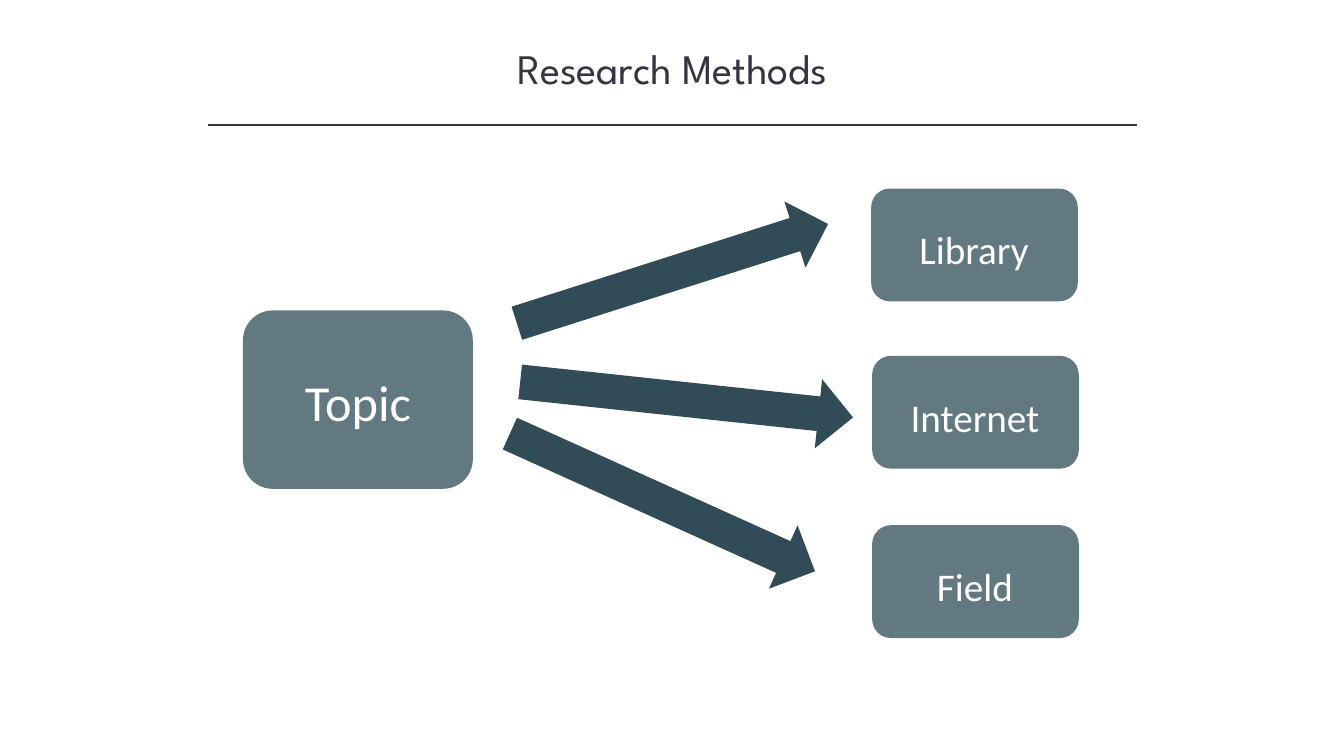
from dataclasses import dataclass

from lxml import etree
from pptx import Presentation
from pptx.dml.color import RGBColor
from pptx.enum.shapes import MSO_CONNECTOR, MSO_SHAPE
from pptx.enum.text import MSO_ANCHOR, PP_ALIGN
from pptx.oxml.ns import qn
from pptx.util import Emu, Pt

STRAIGHT = MSO_CONNECTOR.STRAIGHT
ROUNDED = MSO_SHAPE.ROUNDED_RECTANGLE
RIGHT_ARROW = MSO_SHAPE.RIGHT_ARROW
TOP, MIDDLE = MSO_ANCHOR.TOP, MSO_ANCHOR.MIDDLE
CENTER = PP_ALIGN.CENTER

EMU_PER_PX = 9144  # 100 px to the inch


@dataclass(frozen=True)
class Theme:
    ink: str = "323542"
    card: str = "627981"
    arrow: str = "314C57"
    label: str = "FFFFFF"
    title_font: str = "League Spartan"
    label_font: str = "Calibri"
    title_size: int = 30
    topic_size: int = 36
    method_size: int = 28


THEME = Theme()


def px(*lengths):
    return [Emu(length * EMU_PER_PX) for length in lengths]


def rgb(colour):
    return RGBColor.from_string(colour)


def add_text(shapes, text, box, *, font, size, colour, anchor=TOP, spacing=1.0):
    frame = shapes.add_textbox(*px(*box)).text_frame
    frame.word_wrap = True
    frame.vertical_anchor = anchor
    paragraph = frame.paragraphs[0]
    paragraph.alignment = CENTER
    paragraph.line_spacing = spacing
    run = paragraph.add_run()
    run.text = text
    run.font.name = font
    run.font.size = Pt(size)
    run.font.color.rgb = rgb(colour)


def add_solid(shapes, preset, box, colour, rotation=0):
    solid = shapes.add_shape(preset, *px(*box))
    solid.shadow.inherit = False
    solid.fill.solid()
    solid.fill.fore_color.rgb = rgb(colour)
    solid.line.fill.background()
    solid.rotation = rotation


def add_rule(shapes, left, right, y):
    rule = shapes.add_connector(STRAIGHT, *px(left, y, right, y))
    rule.line.color.rgb = rgb(THEME.ink)
    rule.line.width = Pt(1)
    etree.SubElement(rule._element.spPr, qn("a:effectLst"))


def add_card(shapes, text, card_box, label_box, size):
    """Group a rounded card with its label."""
    group = shapes.add_group_shape().shapes
    add_solid(group, ROUNDED, card_box, THEME.card)
    add_text(group, text, label_box, font=THEME.label_font, size=size,
             colour=THEME.label, anchor=MIDDLE, spacing=1.5)


def main():
    deck = Presentation()
    deck.slide_width, deck.slide_height = px(1333, 750)
    shapes = deck.slides.add_slide(deck.slide_layouts[6]).shapes

    add_text(shapes, "Research Methods", (167, 37, 1000, 61),
             font=THEME.title_font, size=THEME.title_size, colour=THEME.ink)
    add_rule(shapes, 206, 1128, 124)

    add_card(shapes, "Topic", (241, 308, 228, 177), (264, 333, 182, 101),
             THEME.topic_size)

    methods = [("Library", 864, 187), ("Internet", 865, 353), ("Field", 865, 521)]
    for method, left, top in methods:
        add_card(shapes, method, (left, top, 205, 112),
                 (left + 20, top + 8, 164, 81), THEME.method_size)

    arrows = [(505, 237, 324, 342.3), (515, 362, 332, 6.1), (491, 464, 332, 24.3)]
    for left, top, length, angle in arrows:
        add_solid(shapes, RIGHT_ARROW, (left, top, length, 69), THEME.arrow, angle)

    deck.save("out.pptx")


if __name__ == "__main__":
    main()
